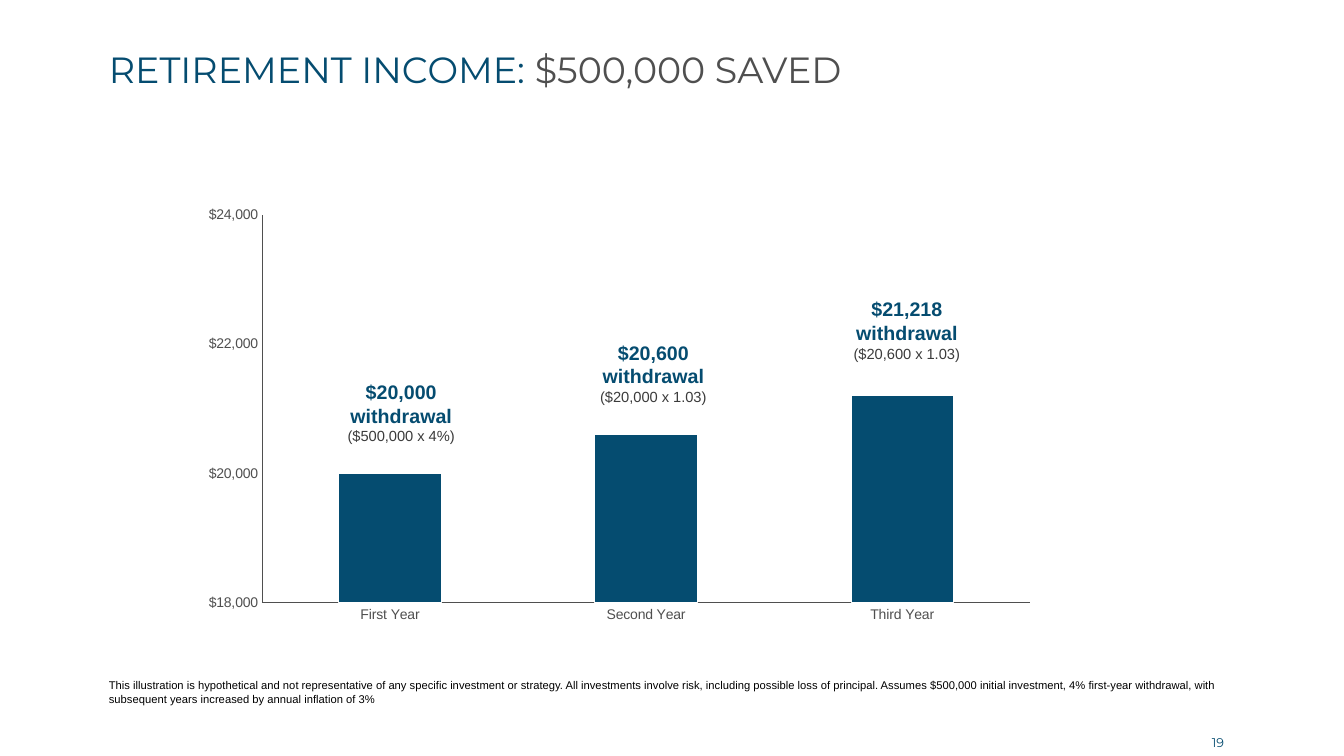
"""Build the retirement income slide with a three-year withdrawal chart."""
import pptx
import pptx.chart.data
import pptx.dml.color
import pptx.enum.chart
import pptx.enum.text
import pptx.oxml
import pptx.util
from pptx.util import Inches

TITLE = [("RETIREMENT INCOME: ", "title"), ("$500,000 SAVED", "title_amount")]
WITHDRAWALS = [
    ("First Year", 20000, "$20,000", "($500,000 x 4%)", (3.28, 3.63, 1.4, 0.92)),
    ("Second Year", 20600, "$20,600", "($20,000 x 1.03)", (5.67, 3.24, 1.62, 0.92)),
    ("Third Year", 21200, "$21,218", "($20,600 x 1.03)", (8.18, 2.81, 1.63, 0.92)),
]
DISCLAIMER = (
    "This illustration is hypothetical and not representative of any specific "
    "investment or strategy. All investments involve risk, including possible loss "
    "of principal. Assumes $500,000 initial investment, 4% first-year withdrawal, "
    "with subsequent years increased by annual inflation of 3%"
)
PAGE = "19"
BOXES = {
    "title": (1.08, 0.31, 11.17, 0.81),
    "disclaimer": (1.08, 6.63, 11.17, 0.37),
    "chart": (2.07, 1.57, 8.17, 4.95),
    "plot": (2.59, 2.13, 7.63, 3.85),
    "page": (11.91, 7.24, 0.34, 0.25),
}
SCALE = {
    "minimum_scale": 18000,
    "maximum_scale": 24000,
    "major_unit": 2000,
}
THEME = {
    "title": ("Montserrat", 26, "054C70", False),
    "title_amount": ("Montserrat", 26, "4F4F4F", False),
    "amount": ("Arial", 14, "054C70", True),
    "formula": ("Arial", 10.5, "3B3B3B", False),
    "axis": ("Arial", 10, "4F4F4F", False),
    "disclaimer": ("Arial", 8, "000000", False),
    "page": ("Montserrat", 9, "054C70", False),
    "bar": "054C70",
    "bar_edge": "FFFFFF",
    "axis_line": "4F4F4F",
}
ALIGN = pptx.enum.text.PP_ALIGN
ANCHOR = pptx.enum.text.MSO_ANCHOR


def rgb(value):
    return pptx.dml.color.RGBColor.from_string(value)


def apply(target, values):
    for key, value in values.items():
        setattr(target, key, value)


def style(font, role):
    name, size, color, bold = THEME[role]
    apply(font, {"name": name, "size": pptx.util.Pt(size), "bold": bold})
    font.color.rgb = rgb(color)


def place(holder, box):
    apply(holder, dict(zip(("left", "top", "width", "height"), map(Inches, box))))


def write(holder, runs, align, anchor, spacing, breaks=False):
    frame = holder.text_frame
    apply(frame, {
        "margin_left": 0, "margin_right": 0, "margin_top": 0, "margin_bottom": 0,
        "word_wrap": True, "vertical_anchor": anchor,
        "auto_size": pptx.enum.text.MSO_AUTO_SIZE.NONE,
    })
    paragraph = frame.paragraphs[0]
    apply(paragraph, {"alignment": align, "line_spacing": spacing,
                      "space_before": pptx.util.Pt(0)})
    for index, (text, role) in enumerate(runs):
        if breaks and index:
            paragraph.add_line_break()
        run = paragraph.add_run()
        run.text = text
        style(run.font, role)
    return paragraph


def add_text(slide, box, runs, breaks=False):
    holder = slide.shapes.add_textbox(*map(Inches, box))
    write(holder, runs, ALIGN.CENTER, ANCHOR.MIDDLE, 1.0, breaks)


def add_withdrawal_chart(slide):
    data = pptx.chart.data.CategoryChartData()
    data.categories = [year for year, *_ in WITHDRAWALS]
    data.add_series("Series 1", [value for _, value, *_ in WITHDRAWALS])
    chart = slide.shapes.add_chart(
        pptx.enum.chart.XL_CHART_TYPE.COLUMN_CLUSTERED,
        *map(Inches, BOXES["chart"]), data).chart
    apply(chart, {"has_legend": False, "has_title": False})
    style(chart.font, "axis")
    apply(chart.value_axis, SCALE)
    apply(chart.value_axis.tick_labels,
          {"number_format": '"$"#,##0', "number_format_is_linked": False})
    for axis in (chart.category_axis, chart.value_axis):
        apply(axis, {"has_major_gridlines": False,
                     "major_tick_mark": pptx.enum.chart.XL_TICK_MARK.NONE,
                     "minor_tick_mark": pptx.enum.chart.XL_TICK_MARK.NONE})
        axis.format.line.color.rgb = rgb(THEME["axis_line"])
        axis.format.line.width = pptx.util.Pt(0.5)
        style(axis.tick_labels.font, "axis")
    columns = chart.plots[0]
    apply(columns, {"gap_width": 150, "vary_by_categories": False})
    bars = columns.series[0].format
    bars.fill.solid()
    bars.fill.fore_color.rgb = rgb(THEME["bar"])
    bars.line.color.rgb = rgb(THEME["bar_edge"])
    bars.line.width = pptx.util.Pt(0.75)
    set_plot_area(chart)


def set_plot_area(chart):
    namespace = "http://schemas.openxmlformats.org/drawingml/2006/chart"
    left, top, width, height = BOXES["chart"]
    plot_left, plot_top, plot_width, plot_height = BOXES["plot"]
    shares = {"x": (plot_left - left) / width, "y": (plot_top - top) / height,
              "w": plot_width / width, "h": plot_height / height}
    modes = '<c:layoutTarget val="inner"/><c:xMode val="edge"/><c:yMode val="edge"/>'
    sizes = "".join(f'<c:{key} val="{share:.4f}"/>' for key, share in shares.items())
    layout = pptx.oxml.parse_xml(
        f'<c:layout xmlns:c="{namespace}"><c:manualLayout>{modes}{sizes}'
        "</c:manualLayout></c:layout>")
    area = chart.element.find(f".//{{{namespace}}}plotArea")
    for old in area.findall(f"{{{namespace}}}layout"):
        area.remove(old)
    area.insert(0, layout)


def add_disclaimer(slide):
    body = slide.placeholders[1]
    place(body, BOXES["disclaimer"])
    paragraph = write(body, [(DISCLAIMER, "disclaimer")],
                      ALIGN.LEFT, ANCHOR.BOTTOM, 1.05)
    properties = paragraph._p.get_or_add_pPr()
    properties.set("marL", "0")
    properties.set("indent", "0")
    properties.append(pptx.oxml.parse_xml(
        '<a:buNone xmlns:a="http://schemas.openxmlformats.org/drawingml/2006/main"/>'))


def main():
    deck = pptx.Presentation()
    apply(deck, {"slide_width": Inches(13.33), "slide_height": Inches(7.5)})
    slide = deck.slides.add_slide(deck.slide_layouts[1])
    place(slide.shapes.title, BOXES["title"])
    write(slide.shapes.title, TITLE, ALIGN.LEFT, ANCHOR.MIDDLE, 0.85)
    add_disclaimer(slide)
    add_withdrawal_chart(slide)
    for _, _, amount, formula, box in WITHDRAWALS:
        label = [(f"{amount} withdrawal", "amount"), (formula, "formula")]
        add_text(slide, box, label, breaks=True)
    add_text(slide, BOXES["page"], [(PAGE, "page")])
    deck.save("out.pptx")


if __name__ == "__main__":
    main()
